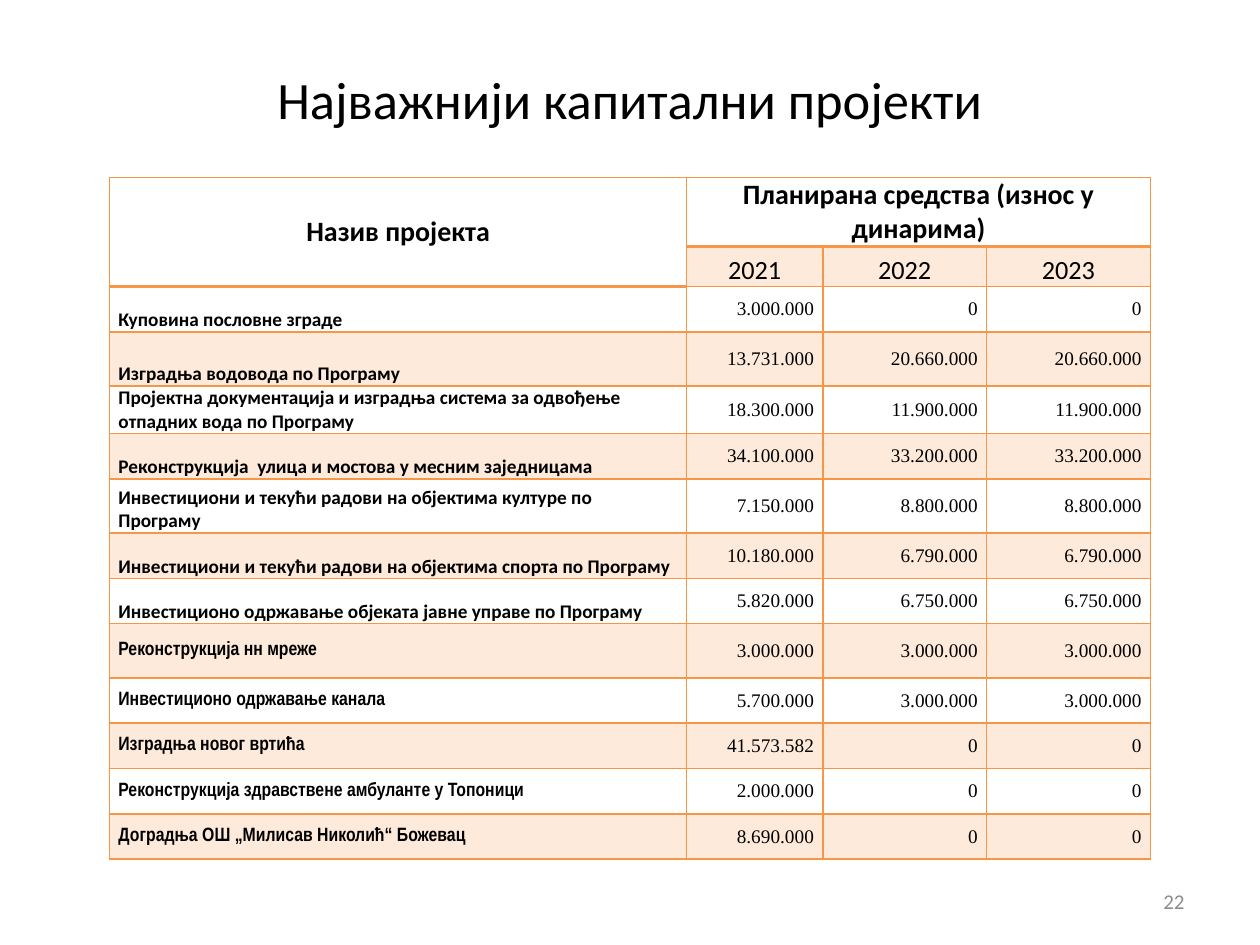
from lxml import etree
from pptx import Presentation
from pptx.dml.color import RGBColor
from pptx.enum.text import MSO_ANCHOR as ANCHOR, PP_ALIGN as ALIGN
from pptx.oxml.ns import qn
from pptx.util import Inches, Pt

TITLE = "Најважнији капитални пројекти"
PAGE_NUMBER = "22"
NAME_HEADING = "Назив пројекта"
FUNDS_HEADING = "Планирана средства (износ у динарима)"
YEARS = ["2021", "2022", "2023"]
PROJECTS = [
    ("Куповина пословне зграде", "3.000.000", "0", "0"),
    ("Изградња водовода по Програму", "13.731.000", "20.660.000", "20.660.000"),
    ("Пројектна документација и изградња система за одвођење отпадних вода по Програму",
     "18.300.000", "11.900.000", "11.900.000"),
    ("Реконструкција  улица и мостова у месним заједницама",
     "34.100.000", "33.200.000", "33.200.000"),
    ("Инвестициони и текући радови на објектима културе по Програму",
     "7.150.000", "8.800.000", "8.800.000"),
    ("Инвестициони и текући радови на објектима спорта по Програму",
     "10.180.000", "6.790.000", "6.790.000"),
    ("Инвестиционо одржавање објеката јавне управе по Програму",
     "5.820.000", "6.750.000", "6.750.000"),
    ("Реконструкција нн мреже", "3.000.000", "3.000.000", "3.000.000"),
    ("Инвестиционо одржавање канала", "5.700.000", "3.000.000", "3.000.000"),
    ("Изградња новог вртића", "41.573.582", "0", "0"),
    ("Реконструкција здравствене амбуланте у Топоници", "2.000.000", "0", "0"),
    ("Доградња ОШ „Милисав Николић“ Божевац", "8.690.000", "0", "0"),
]
CALIBRI_PROJECTS = 7  # the later project names are set in Arial Narrow

ORANGE, BLACK, GREY = "F79646", "000000", "8C8C8C"
COLUMN_WIDTHS = [4.58, 1.08, 1.3, 1.3]
HEADER_HEIGHTS = [0.54, 0.32]
ROW_HEIGHT = 0.36
SPECIAL_HEIGHTS = {1: 0.43, 2: 0.37, 4: 0.43, 7: 0.43}


def rgb(color):
    return RGBColor.from_string(color)


def write(frame, text, size, align, anchor, font="Calibri", bold=False, color=BLACK):
    frame.text = text
    frame.vertical_anchor = anchor
    paragraph = frame.paragraphs[0]
    paragraph.alignment = align
    style = paragraph.runs[0].font
    style.name, style.size, style.bold = font, Pt(size), bold
    style.color.rgb = rgb(color)


def write_cell(cell, text, size, align, anchor, **style):
    write(cell.text_frame, text, size, align, anchor, **style)
    cell.vertical_anchor = anchor


def tint(cell):
    """Fill with orange at 20 % opacity."""
    cell.fill.solid()
    cell.fill.fore_color.rgb = rgb(ORANGE)
    color = cell.fill._xPr.find(".//" + qn("a:srgbClr"))
    etree.SubElement(color, qn("a:alpha"), val="20000")


def add_borders(cell, bottom):
    properties = cell._tc.get_or_add_tcPr()
    for index, (side, width) in enumerate(
            [("lnL", 1), ("lnR", 1), ("lnT", 1), ("lnB", bottom)]):
        line = etree.Element(qn("a:" + side), w=str(Pt(width)))
        fill = etree.SubElement(line, qn("a:solidFill"))
        etree.SubElement(fill, qn("a:srgbClr"), val=ORANGE)
        properties.insert(index, line)


def add_projects_table(slide):
    heights = HEADER_HEIGHTS + [SPECIAL_HEIGHTS.get(i, ROW_HEIGHT)
                                for i in range(len(PROJECTS))]
    frame = slide.shapes.add_table(
        len(heights), len(COLUMN_WIDTHS), Inches(0.87), Inches(1.41),
        Inches(sum(COLUMN_WIDTHS)), Inches(sum(heights)))
    table = frame.table
    table.first_row = table.horz_banding = False
    for column, width in zip(table.columns, COLUMN_WIDTHS):
        column.width = Inches(width)
    for row, height in zip(table.rows, heights):
        row.height = Inches(height)

    for r, row in enumerate(table.rows):
        for c, cell in enumerate(row.cells):
            cell.margin_left = cell.margin_right = Inches(0.07)
            cell.margin_top = cell.margin_bottom = 0
            in_heading = r == 0 or (r == 1 and c == 0)
            if r % 2 and not in_heading:
                tint(cell)
            else:
                cell.fill.background()
            add_borders(cell, bottom=2 if in_heading else 1)

    table.cell(0, 0).merge(table.cell(1, 0))
    table.cell(0, 1).merge(table.cell(0, 3))
    write_cell(table.cell(0, 0), NAME_HEADING, 16, ALIGN.CENTER, ANCHOR.MIDDLE, bold=True)
    write_cell(table.cell(0, 1), FUNDS_HEADING, 16, ALIGN.CENTER, ANCHOR.BOTTOM, bold=True)
    for c, year in enumerate(YEARS, 1):
        write_cell(table.cell(1, c), year, 15, ALIGN.CENTER, ANCHOR.BOTTOM)

    for i, (name, *amounts) in enumerate(PROJECTS):
        r = i + len(HEADER_HEIGHTS)
        font, anchor = (("Calibri", ANCHOR.BOTTOM) if i < CALIBRI_PROJECTS
                        else ("Arial Narrow", ANCHOR.MIDDLE))
        write_cell(table.cell(r, 0), name, 11, ALIGN.LEFT, anchor, font=font, bold=True)
        for c, amount in enumerate(amounts, 1):
            write_cell(table.cell(r, c), amount, 11, ALIGN.RIGHT, ANCHOR.MIDDLE,
                       font="Times New Roman")


def main():
    deck = Presentation()
    deck.slide_width, deck.slide_height = Inches(10), Inches(7.5)
    slide = deck.slides.add_slide(deck.slide_layouts[5])

    title = slide.shapes.title
    title.left, title.top = Inches(0.5), Inches(0.3)
    title.width, title.height = Inches(9), Inches(0.96)
    write(title.text_frame, TITLE, 30, ALIGN.CENTER, ANCHOR.MIDDLE)

    add_projects_table(slide)

    page = slide.shapes.add_textbox(Inches(7.17), Inches(6.95), Inches(2.33), Inches(0.4))
    page.text_frame.word_wrap = True
    write(page.text_frame, PAGE_NUMBER, 12, ALIGN.RIGHT, ANCHOR.MIDDLE, color=GREY)

    deck.save("out.pptx")


if __name__ == "__main__":
    main()
